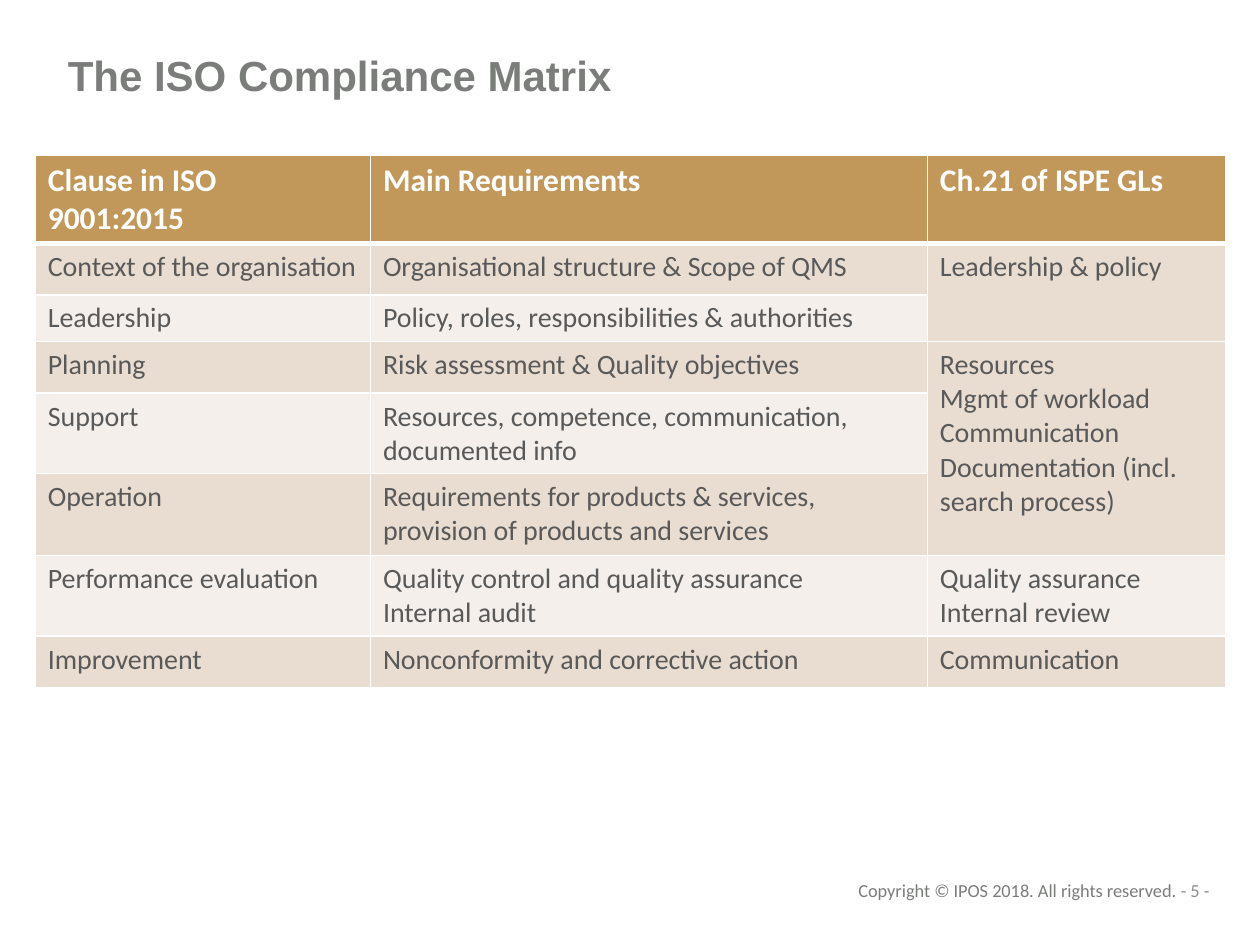
import pptx
import pptx.dml.color
import pptx.enum.text
import pptx.oxml
import pptx.oxml.ns
import pptx.util

RGBColor = pptx.dml.color.RGBColor
Align = pptx.enum.text.PP_ALIGN
Anchor = pptx.enum.text.MSO_ANCHOR

WHITE = RGBColor(0xFF, 0xFF, 0xFF)
TITLE_GREY = RGBColor(0x7B, 0x7D, 0x7B)
NUMBER_GREY = RGBColor(0x8C, 0x8C, 0x8C)
BODY_GREY = RGBColor(0x59, 0x59, 0x59)
GOLD = RGBColor(0xC1, 0x98, 0x59)
DARK_BAND = RGBColor(0xE9, 0xDD, 0xD1)
LIGHT_BAND = RGBColor(0xF4, 0xEF, 0xEA)

WIDTH, HEIGHT = 10, 7.5
COLUMN_WIDTHS = (2.66, 4.42, 2.37)
ROW_HEIGHTS = (0.7, 0.41, 0.37, 0.41, 0.64, 0.65, 0.64, 0.41)
TABLE_HEIGHT = 3.89

# None continues the cell above; a tuple holds one paragraph per entry.
MATRIX = (
    ("Clause in ISO 9001:2015", "Main Requirements", "Ch.21 of ISPE GLs"),
    ("Context of the organisation", "Organisational structure & Scope of QMS",
     "Leadership & policy"),
    ("Leadership", "Policy, roles, responsibilities & authorities", None),
    ("Planning", "Risk assessment & Quality objectives",
     ("Resources", "Mgmt of workload",
      "Communication Documentation (incl. search process)")),
    ("Support", "Resources, competence, communication, documented info", None),
    ("Operation",
     "Requirements for products & services, provision of products and services", None),
    ("Performance evaluation",
     ("Quality control and quality assurance", "Internal audit"),
     ("Quality assurance", "Internal review")),
    ("Improvement", "Nonconformity and corrective action", "Communication"),
)


class SlideWriter:
    """Holds the text styles and the slide that is being filled."""

    styles = {
        "title": {"name": "Arial", "size": pptx.util.Pt(24), "bold": True, "color": TITLE_GREY},
        "header": {"name": "Calibri", "size": pptx.util.Pt(18), "bold": True, "color": WHITE},
        "body": {"name": "Calibri", "size": pptx.util.Pt(16), "bold": False, "color": BODY_GREY},
        "footer": {"name": "Calibri", "size": pptx.util.Pt(10.5), "color": TITLE_GREY},
        "number": {"name": "Calibri", "size": pptx.util.Pt(10.5), "color": NUMBER_GREY},
    }

    def __init__(self, deck):
        self.deck = deck
        self.slide = deck.slides.add_slide(deck.slide_layouts[6])

    def place(self, left, top, width, height):
        """Turn shares of the slide's size into lengths."""
        across, down = self.deck.slide_width, self.deck.slide_height
        return (round(left * across), round(top * down),
                round(width * across), round(height * down))

    def span(self, para, text, style):
        span = para.add_run()
        span.text = text
        for name, value in self.styles[style].items():
            if name == "color":
                span.font.color.rgb = value
            else:
                setattr(span.font, name, value)

    def text(self, area, spans, align=Align.LEFT, anchor=Anchor.TOP):
        frame = self.slide.shapes.add_textbox(*self.place(*area)).text_frame
        frame.word_wrap = True
        frame.vertical_anchor = anchor
        para = frame.paragraphs[0]
        para.alignment = align
        for text, style in spans:
            self.span(para, text, style)

    def border(self, cell, side, points):
        line = pptx.oxml.parse_xml(
            f'<a:ln{side} {pptx.oxml.ns.nsdecls("a")} w="{pptx.util.Pt(points)}">'
            f'<a:solidFill><a:srgbClr val="{WHITE}"/></a:solidFill></a:ln{side}>')
        properties = cell._tc.get_or_add_tcPr()
        properties.insert(len(properties) - 1, line)  # borders precede the fill

    def cell(self, cell, content, style, fill, edges):
        cell.fill.solid()
        cell.fill.fore_color.rgb = fill
        for side, points in edges.items():
            self.border(cell, side, points)
        if content is None:
            return
        paragraphs = (content,) if isinstance(content, str) else content
        for index, text in enumerate(paragraphs):
            frame = cell.text_frame
            para = frame.add_paragraph() if index else frame.paragraphs[0]
            self.span(para, text, style)

    def table(self, area, rows):
        shape = self.slide.shapes.add_table(
            len(rows), len(COLUMN_WIDTHS), *self.place(*area))
        table = shape.table
        for column, width in zip(table.columns, COLUMN_WIDTHS):
            column.width = pptx.util.Inches(width)
        for r, row in enumerate(rows):
            table.rows[r].height = pptx.util.Inches(ROW_HEIGHTS[r])
            style = "body" if r else "header"
            band = (DARK_BAND if r % 2 else LIGHT_BAND) if r else GOLD
            edges = {"L": 1, "R": 1, "T": 3 if r == 1 else 1, "B": 1 if r else 3}
            for c, content in enumerate(row):
                continued = content is None
                self.cell(table.cell(r, c), content, style,
                          DARK_BAND if continued else band, edges)
        self.merge_continued(table, rows)
        shape.height = pptx.util.Inches(TABLE_HEIGHT)

    def merge_continued(self, table, rows):
        for c in range(len(COLUMN_WIDTHS)):
            start = 0
            for r in range(1, len(rows) + 1):
                if r == len(rows) or rows[r][c] is not None:
                    if r - start > 1:
                        table.cell(start, c).merge(table.cell(r - 1, c))
                    start = r


def main():
    deck = pptx.Presentation()
    deck.slide_width = pptx.util.Inches(WIDTH)
    deck.slide_height = pptx.util.Inches(HEIGHT)
    writer = SlideWriter(deck)
    writer.text((0.642, 6.93 / HEIGHT, 0.331, 0.28 / HEIGHT),
                (("Copyright © IPOS 2018. All rights reserved. ", "footer"),
                 ("- 5 - ", "number")), align=Align.RIGHT)
    writer.text((0.044, 0.33 / HEIGHT, 0.85, 0.52 / HEIGHT),
                (("The ISO Compliance Matrix", "title"),), anchor=Anchor.MIDDLE)
    writer.table((0.028, 1.23 / HEIGHT, 0.945, TABLE_HEIGHT / HEIGHT), MATRIX)
    deck.save("out.pptx")


if __name__ == "__main__":
    main()
